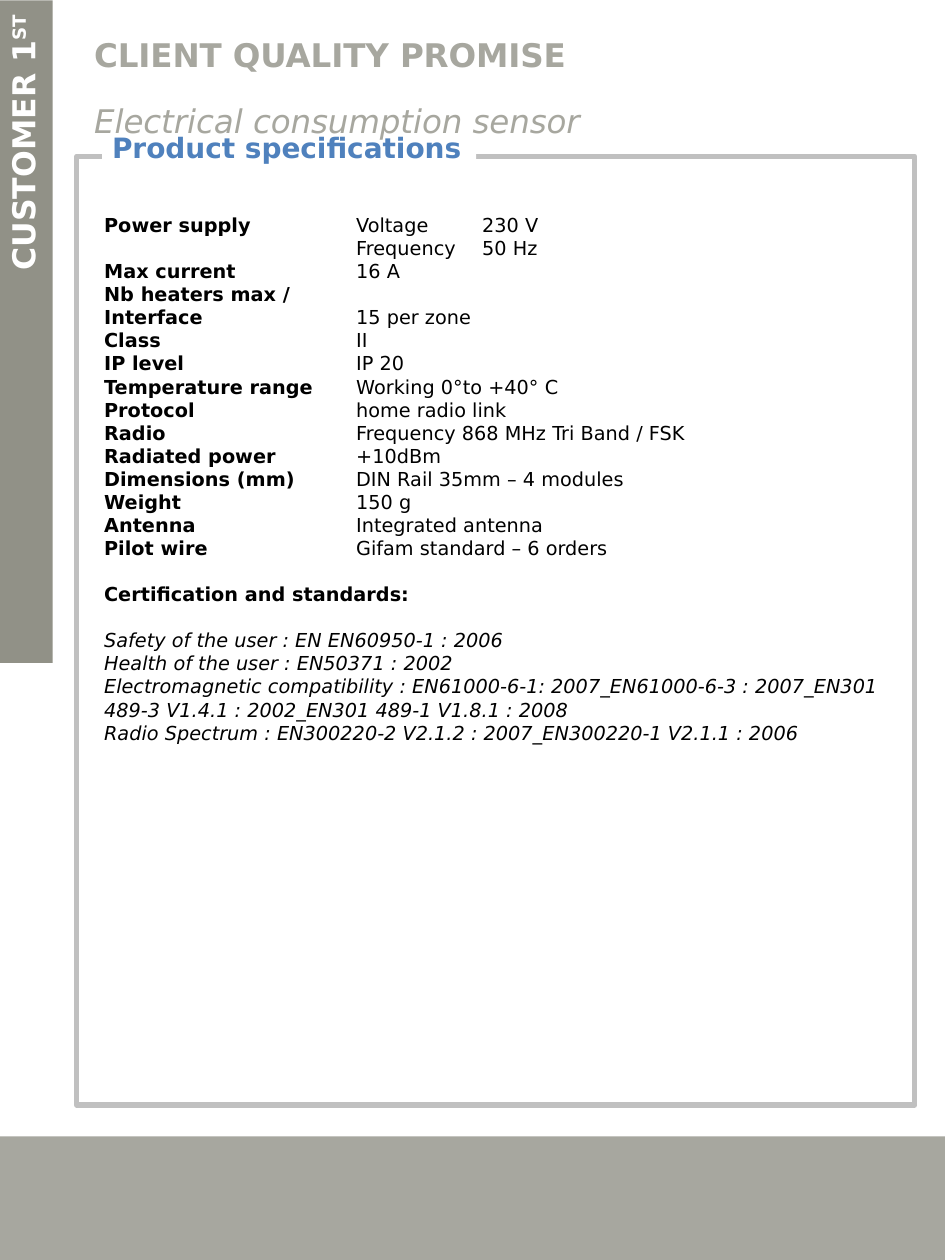
import pptx
import pptx.util
import pptx.dml.color
import pptx.enum.shapes
import pptx.enum.text
import pptx.oxml.ns
import lxml.etree

Cm = pptx.util.Cm
Pt = pptx.util.Pt
Align = pptx.enum.text.PP_ALIGN
Anchor = pptx.enum.text.MSO_ANCHOR
HUES = {"foot": "A7A79F", "side": "919187", "line": "C0C0C0",
        "blue": "4F81BD", "white": "FFFFFF", "black": "000000"}
ROWS = [
    ("Power supply", "Voltage\t230 V"),
    ("", "Frequency\t50 Hz"),
    ("Max current", "16 A"),
    ("Nb heaters max /", ""),
    ("Interface", "15 per zone"),
    ("Class", "II"),
    ("IP level", "IP 20"),
    ("Temperature range", "Working 0°to +40° C"),
    ("Protocol", "home radio link"),
    ("Radio", "Frequency 868 MHz Tri Band / FSK"),
    ("Radiated power", "+10dBm"),
    ("Dimensions (mm)", "DIN Rail 35mm – 4 modules"),
    ("Weight", "150 g"),
    ("Antenna", "Integrated antenna"),
    ("Pilot wire", "Gifam standard – 6 orders"),
]
NORMS = [
    "Safety of the user : EN EN60950-1 : 2006",
    "Health of the user : EN50371 : 2002",
    "Electromagnetic compatibility : EN61000-6-1: 2007_EN61000-6-3 : 2007_"
    "EN301 489-3 V1.4.1 : 2002_EN301 489-1 V1.8.1 : 2008",
    "Radio Spectrum : EN300220-2 V2.1.2 : 2007_EN300220-1 V2.1.1 : 2006",
]


class Sheet:
    """Holds the font and the current slide, and draws each kind of element."""

    def __init__(self, slide, font):
        self.slide = slide
        self.font = font

    def rect(self, box, fill=None, line=None):
        kind = pptx.enum.shapes.MSO_SHAPE.RECTANGLE
        shape = self.slide.shapes.add_shape(kind, *map(Cm, box))
        shape.shadow.inherit = False
        if fill:
            shape.fill.solid()
            shape.fill.fore_color.rgb = self.hue(fill)
        else:
            shape.fill.background()
        if line:
            shape.line.color.rgb = self.hue(line)
            shape.line.width = Pt(3)
        else:
            shape.line.fill.background()
        return shape

    def text(self, box):
        shape = self.slide.shapes.add_textbox(*map(Cm, box))
        shape.text_frame.word_wrap = True
        return shape

    def para(self, frame, align=Align.LEFT, gap=0, space=None):
        para = frame.paragraphs[0]
        if para.runs:
            para = frame.add_paragraph()
            para.space_before = Pt(gap)
        para.alignment = align
        if space:
            para.line_spacing = space
        return para

    def tabs(self, para, *stops):
        qn = pptx.oxml.ns.qn
        tabs = lxml.etree.SubElement(para._p.get_or_add_pPr(), qn("a:tabLst"))
        for stop in stops:
            lxml.etree.SubElement(tabs, qn("a:tab"), pos=str(Cm(stop)), algn="l")

    def run(self, para, text, size, hue, bold=False, slant=False, rise=0):
        run = para.add_run()
        run.text = text
        run.font.name = self.font
        run.font.size = Pt(size)
        run.font.bold = bold
        run.font.italic = slant
        run.font.color.rgb = self.hue(hue)
        if rise:
            run._r.get_or_add_rPr().set("baseline", str(rise * 1000))

    def hue(self, name):
        return pptx.dml.color.RGBColor.from_string(HUES[name])


def main():
    deck = pptx.Presentation()
    deck.slide_width, deck.slide_height = Cm(19.05), Cm(25.4)
    sheet = Sheet(deck.slides.add_slide(deck.slide_layouts[6]), "DejaVu Sans")

    sheet.rect((0, 22.91, 19.05, 2.49), "foot")
    side = sheet.rect((-6.15, 6.15, 13.36, 1.07), "side")
    side.rotation = 270
    frame = side.text_frame
    frame.vertical_anchor = Anchor.MIDDLE
    frame.margin_left = frame.margin_right = Cm(0.3)
    para = sheet.para(frame, Align.RIGHT, space=0.8)
    sheet.run(para, "CUSTOMER 1", 18, "white", bold=True)
    sheet.run(para, "ST", 18, "white", bold=True, rise=30)

    frame = sheet.text((1.85, 4.17, 16.31, 13)).text_frame
    for label, value in ROWS:
        para = sheet.para(frame)
        sheet.tabs(para, 5.08, 7.62)
        if label:
            sheet.run(para, label, 11, "black", bold=True)
        if value:
            sheet.run(para, "\t" + value, 11, "black")
    para = sheet.para(frame, gap=13)
    sheet.run(para, "Certification and standards:", 11, "black", bold=True)
    for spot, norm in enumerate(NORMS):
        para = sheet.para(frame, gap=0 if spot else 13)
        sheet.run(para, norm, 11, "black", slant=True)

    sheet.rect((1.55, 3.15, 16.89, 19.13), line="line")
    frame = sheet.rect((2.06, 2.51, 7.54, 0.94), "white").text_frame
    frame.word_wrap = False
    frame.vertical_anchor = Anchor.TOP
    frame.margin_left = Cm(0.2)
    sheet.run(sheet.para(frame), "Product specifications", 16, "blue", bold=True)

    frame = sheet.text((0.43, 1.09, 15.32, 1.9)).text_frame
    frame.vertical_anchor = Anchor.MIDDLE
    for text, bold in (("CLIENT QUALITY PROMISE", True),
                       ("Electrical consumption sensor", False)):
        para = sheet.para(frame, gap=7.5, space=0.8)
        para._p.get_or_add_pPr().set("marL", str(Cm(1.22)))
        sheet.run(para, text, 32, "foot", bold, not bold, rise=30)

    deck.save("out.pptx")


if __name__ == "__main__":
    main()
